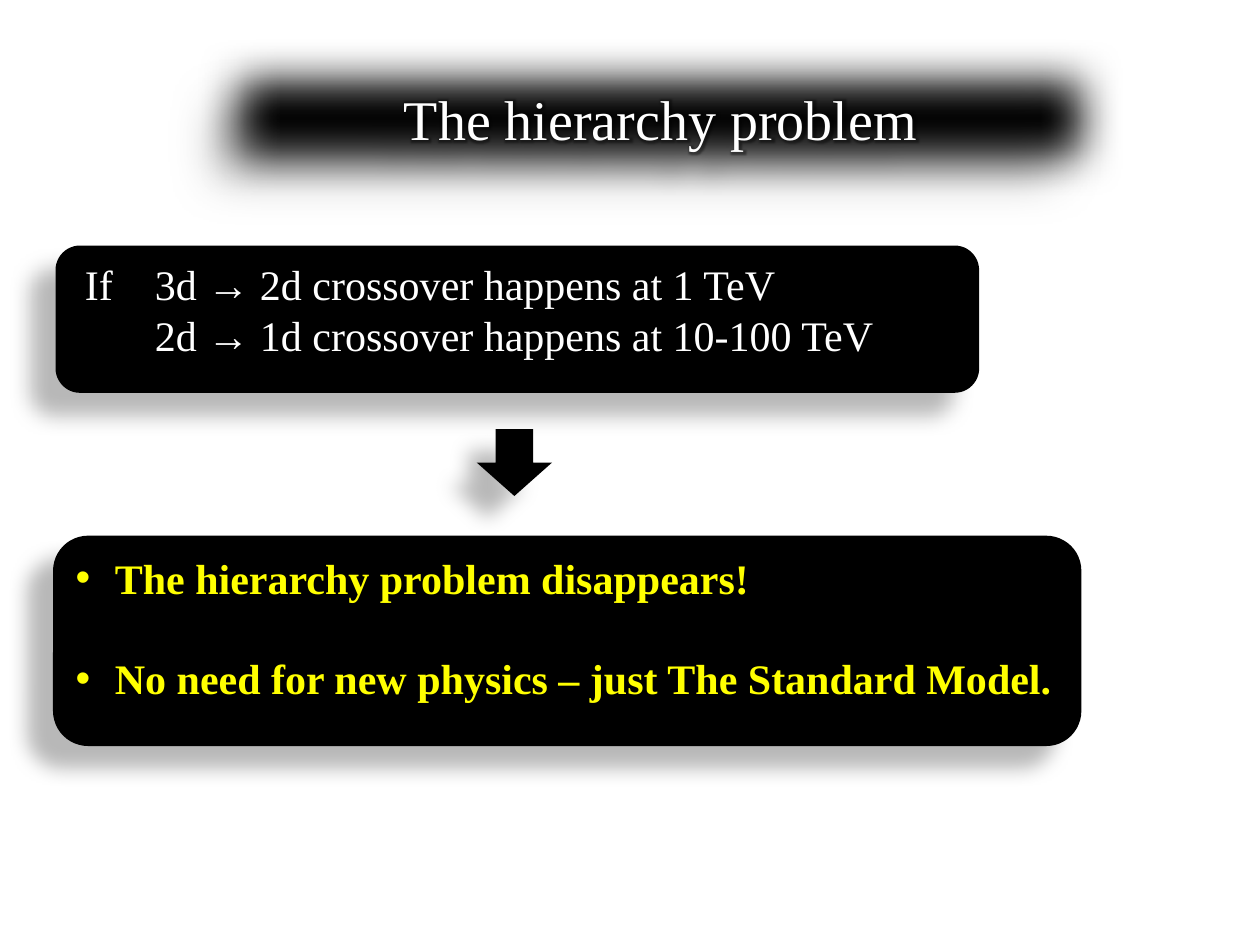
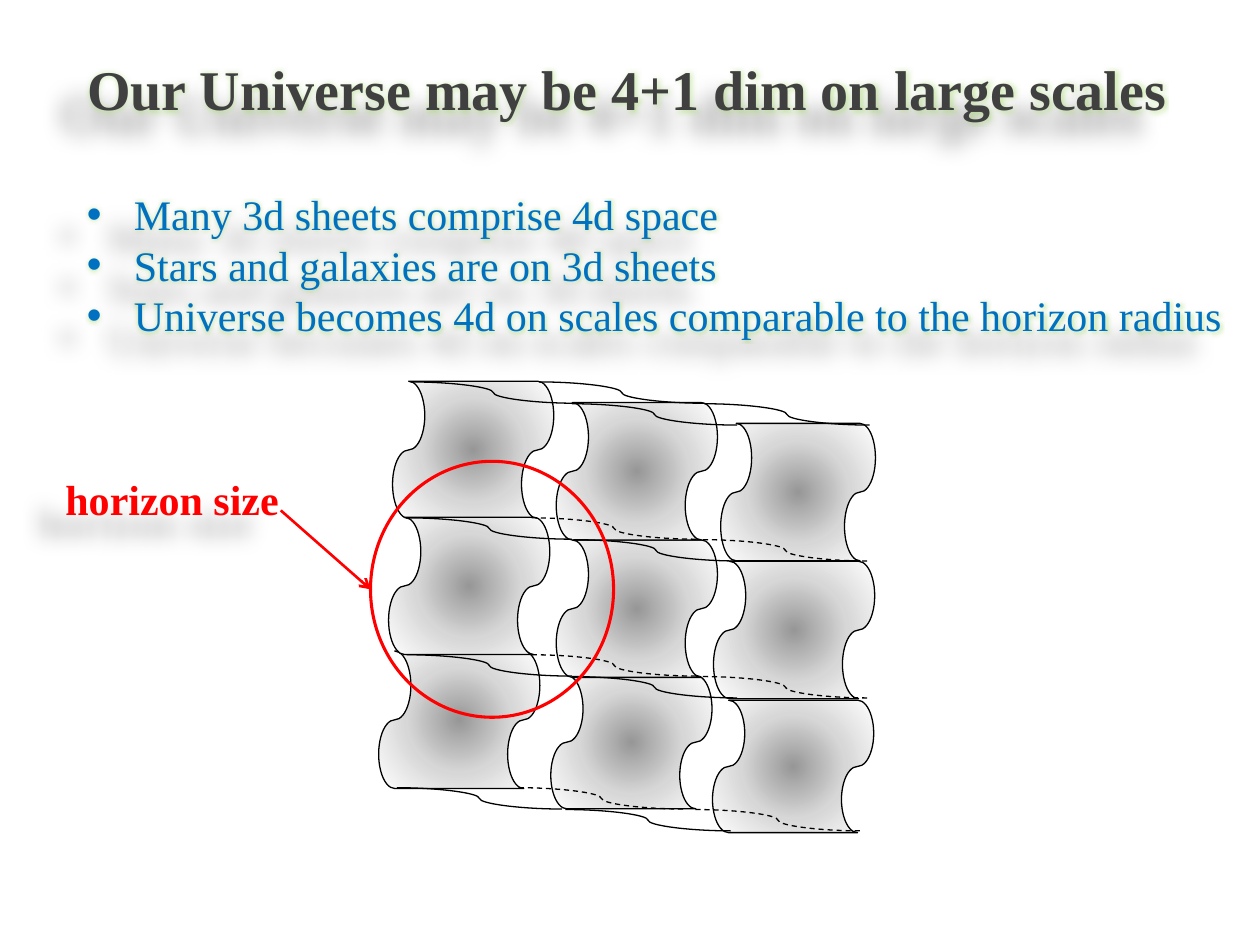
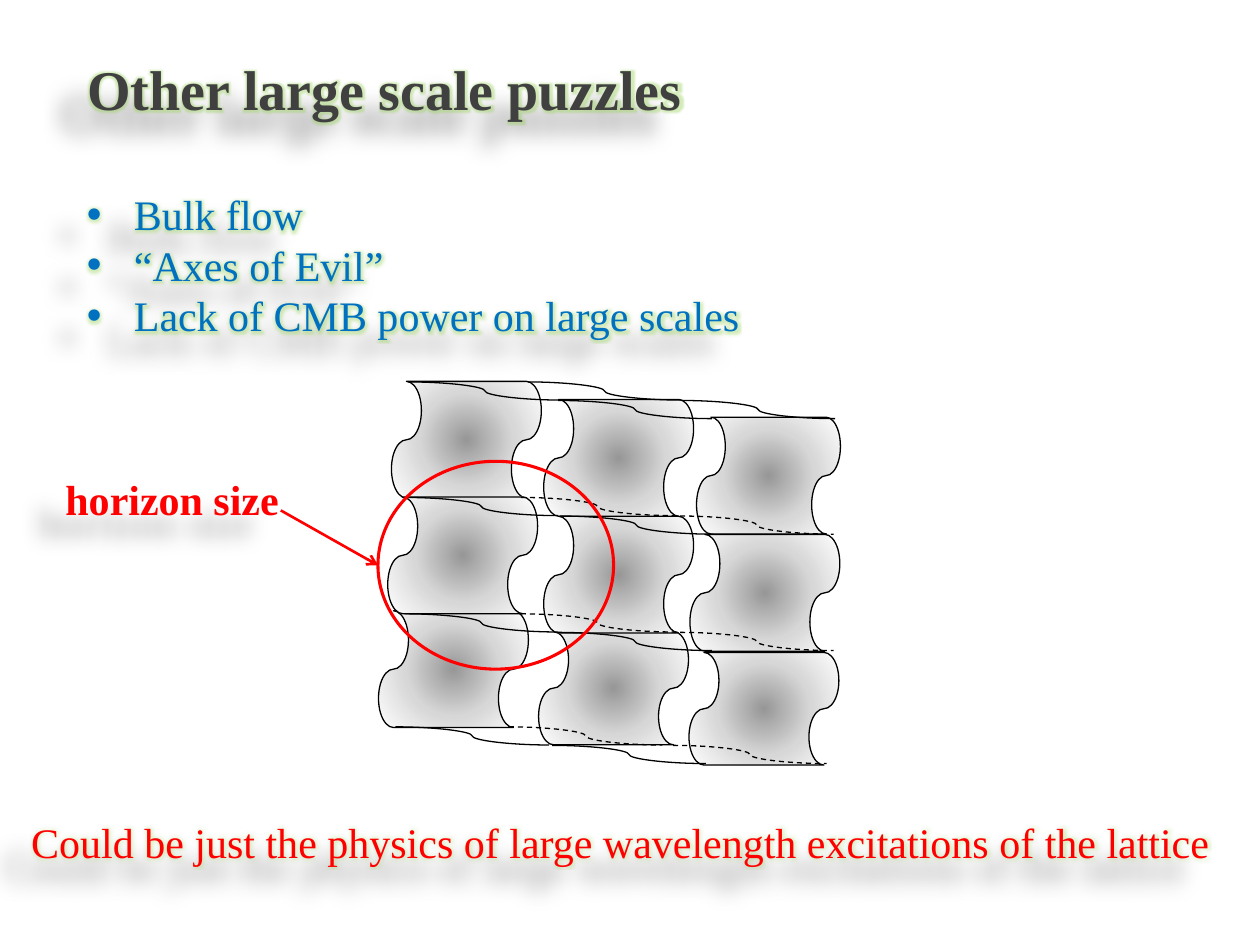
"""Build three slides on the hierarchy problem and a layered universe."""
from dataclasses import dataclass
from typing import Any

import lxml.etree
import pptx
import pptx.dml.color
import pptx.enum.dml
import pptx.enum.shapes
import pptx.enum.text
import pptx.oxml
import pptx.oxml.ns
import pptx.util

Cm = pptx.util.Cm
Pt = pptx.util.Pt
Shape = pptx.enum.shapes.MSO_SHAPE
Link = pptx.enum.shapes.MSO_CONNECTOR
Align = pptx.enum.text.PP_ALIGN
Anchor = pptx.enum.text.MSO_ANCHOR
qn = pptx.oxml.ns.qn

FONT = "Times New Roman"
LEADING = 1.2
COLORS = {
    "black": "000000", "white": "FFFFFF", "yellow": "FFFF00", "red": "FF0000",
    "blue": "0070C0", "gray": "404040", "lime": "92D050",
    "core": "979797", "mid": "D7D7D7",
}
CURVE = (3.33, 0.43)
STEP = 0.44


@dataclass
class Box:
    left: float
    top: float
    width: float
    height: float

    def place(self) -> tuple:
        return Cm(self.left), Cm(self.top), Cm(self.width), Cm(self.height)


@dataclass
class Style:
    size: int
    color: str
    bold: bool = False
    glow: str = ""
    align: Any = Align.LEFT
    indent: float = 0
    tab: float = 0
    gap: float = 0


@dataclass
class Sheet:
    x: float
    y: float
    width: float = 3.25
    height: float = 2.77


@dataclass
class Row:
    top: float
    lefts: tuple
    hidden: bool = True


@dataclass
class Grid:
    left: float
    top: float
    wide: float = 1
    tall: float = 1


@dataclass
class Page:
    title: str
    points: tuple
    grid: Grid
    ring: Box
    note: str = ""


SHEETS = (
    Sheet(4.45, 7.26, height=2.69), Sheet(0.98, 6.81), Sheet(4.56, 4.57),
    Sheet(7.81, 2.22, width=3.12), Sheet(4.56, 1.8), Sheet(7.73, 5),
    Sheet(1.26, 1.37), Sheet(1.18, 4.11), Sheet(7.71, 7.75, height=2.67),
)
ROWS = (
    Row(0, (0, 2.59, 3.25, 5.92), hidden=False),
    Row(2.74, (-0.08, 2.44, 3.28, 5.89)),
    Row(5.5, (-0.08, 2.44, 3.25, 5.89)),
    Row(8.18, (-0.28, 2.18, 3.12, 5.74)),
)
HEAD = Style(32, "gray", bold=True, glow="lime")
POINT = Style(24, "blue", glow="lime", indent=0.95)
LABEL = Style(24, "red", bold=True)
NOTE = Style(24, "red", glow="lime")
PAGES = (
    Page("Our Universe may be 4+1 dim on large scales",
         ("Many 3d sheets comprise 4d space",
          "Stars and galaxies are on 3d sheets",
          "Universe becomes 4d on scales comparable to the horizon radius"),
         Grid(8.28, 7.7), Box(7.47, 9.3, 4.9, 5.16)),
    Page("Other large scale puzzles",
         ("Bulk flow", "“Axes of Evil”", "Lack of CMB power on large scales"),
         Grid(8.23, 7.7, 0.93, 0.85), Box(7.62, 9.3, 4.75, 4.19),
         "Could be just the physics of large wavelength excitations of the lattice"),
)


def rgb(name: str) -> pptx.dml.color.RGBColor:
    return pptx.dml.color.RGBColor.from_string(COLORS[name])


def node(xml: str) -> Any:
    return pptx.oxml.parse_xml(xml.replace(" ", f' {pptx.oxml.ns.nsdecls("a")} ', 1))


def tint(name: str, alpha: int) -> str:
    return f'<a:srgbClr val="{COLORS[name]}"><a:alpha val="{alpha * 1000}"/></a:srgbClr>'


def shade(shape: Any, soft: int = 0) -> None:
    """Give a shape the slanted shadow and, if asked, a soft edge."""
    shape.shadow.inherit = False
    effects = shape._element.spPr.find(qn("a:effectLst"))
    effects.append(node(
        f'<a:outerShdw blurRad="{Pt(11.8)}" dist="{Pt(19.7)}" dir="{141 * 60000}" '
        f'algn="tl" rotWithShape="0">{tint("black", 28)}</a:outerShdw>'))
    if soft:
        effects.append(node(f'<a:softEdge rad="{Pt(soft)}"/>'))


def paint(shape: Any, soft: int = 0) -> None:
    shape.fill.solid()
    shape.fill.fore_color.rgb = rgb("black")
    shape.line.fill.background()
    shade(shape, soft)


def write(shape: Any, text: str, style: Style, anchor: Any = Anchor.TOP) -> None:
    """Fill a shape with text and format each paragraph and run."""
    frame = shape.text_frame
    frame.text = text
    frame.word_wrap = True
    frame.auto_size = pptx.enum.text.MSO_AUTO_SIZE.NONE
    frame.vertical_anchor = anchor
    for index, para in enumerate(frame.paragraphs):
        para.alignment = style.align
        para.line_spacing = Pt(style.size * LEADING)
        para.space_before = Pt(style.gap if index else 0)
        props = para._p.get_or_add_pPr()
        if style.indent:
            props.set("marL", str(Cm(style.indent)))
            props.set("indent", str(-Cm(style.indent)))
            props.append(node('<a:buFont typeface="Arial"/>'))
            props.append(node('<a:buChar char="•"/>'))
        if style.tab:
            tabs = lxml.etree.SubElement(props, qn("a:tabLst"))
            tabs.append(node(f'<a:tab pos="{Cm(style.tab)}" algn="l"/>'))
        for run in para.runs:
            font = run.font
            font.name, font.size, font.bold = FONT, Pt(style.size), style.bold
            font.color.rgb = rgb(style.color)
            if style.glow:
                fill = run._r.rPr.find(qn("a:solidFill"))
                effects = lxml.etree.Element(qn("a:effectLst"))
                effects.append(node(
                    f'<a:glow rad="{Pt(5)}">{tint(style.glow, 40)}</a:glow>'))
                fill.addnext(effects)


def start(deck: Any, title: str, box: Box, style: Style, anchor: Any) -> Any:
    """Add a title-only slide with its title placed and formatted."""
    slide = deck.slides.add_slide(deck.slide_layouts[5])
    head = slide.shapes.title
    head.left, head.top, head.width, head.height = box.place()
    write(head, title, style, anchor)
    return slide


def label(slide: Any, text: str, box: Box, style: Style) -> Any:
    shape = slide.shapes.add_textbox(*box.place())
    write(shape, text, style)
    shade(shape)
    return shape


def panel(slide: Any, kind: Any, box: Box) -> Any:
    shape = slide.shapes.add_shape(kind, *box.place())
    paint(shape)
    return shape


def join(slide: Any, kind: Any, ends: tuple, color: str, width: float) -> Any:
    link = slide.shapes.add_connector(kind, *map(Cm, ends))
    link.line.color.rgb = rgb(color)
    link.line.width = Pt(width)
    lxml.etree.SubElement(link._element.spPr, qn("a:effectLst"))
    return link


def tape(slide: Any, grid: Grid, sheet: Sheet) -> None:
    """Draw one curved sheet, turned on its side, around its centre."""
    wide, tall = sheet.width * grid.wide, sheet.height * grid.tall
    box = Box(grid.left + sheet.x * grid.wide - tall / 2,
              grid.top + sheet.y * grid.tall - wide / 2, tall, wide)
    shape = slide.shapes.add_shape(Shape.FLOWCHART_PUNCHED_TAPE, *box.place())
    shape.rotation = 90
    shape.shadow.inherit = False
    shape.line.color.rgb = rgb("black")
    shape.line.width = Pt(0.75)
    shape.fill.solid()
    props = shape._element.spPr
    props.find(qn("a:xfrm")).set("flipH", "1")
    stops = "".join(
        f'<a:gs pos="{pos * 1000}"><a:srgbClr val="{COLORS[name]}"/></a:gs>'
        for pos, name in ((0, "core"), (50, "mid"), (100, "white")))
    old = props.find(qn("a:solidFill"))
    props.replace(old, node(
        f'<a:gradFill rotWithShape="1"><a:gsLst>{stops}</a:gsLst><a:path path="circle">'
        '<a:fillToRect l="50000" t="50000" r="50000" b="50000"/></a:path></a:gradFill>'))


def weave(slide: Any, grid: Grid) -> None:
    """Draw the stacked sheets and the curves that tie them together."""
    for sheet in SHEETS:
        tape(slide, grid, sheet)
    for row in ROWS:
        for index, left in enumerate(row.lefts):
            x = grid.left + left * grid.wide
            y = grid.top + (row.top + index // 2 * STEP) * grid.tall
            ends = (x, y, x + CURVE[0] * grid.wide, y + CURVE[1] * grid.tall)
            link = join(slide, Link.CURVE, ends, "black", 0.75)
            if row.hidden and index % 2:
                link.line.dash_style = pptx.enum.dml.MSO_LINE.DASH


def claim(deck: Any) -> None:
    """Build the slide on the hierarchy problem."""
    style = Style(32, "white", glow="black", align=Align.CENTER)
    slide = start(deck, "The hierarchy problem", Box(4.01, 0.79, 18.62, 3.18),
                  style, Anchor.MIDDLE)
    paint(slide.shapes.title, soft=25)
    cause = panel(slide, Shape.ROUNDED_RECTANGLE, Box(1.12, 4.95, 18.62, 2.97))
    write(cause, "If\t3d → 2d crossover happens at 1 TeV\n"
          "\t2d → 1d crossover happens at 10-100 TeV", Style(24, "white", tab=1.41))
    cause.text_frame.margin_left = Cm(0.45)
    panel(slide, Shape.DOWN_ARROW, Box(9.61, 8.65, 1.52, 1.35))
    result = panel(slide, Shape.ROUNDED_RECTANGLE, Box(1.07, 10.8, 20.73, 4.24))
    write(result, "The hierarchy problem disappears!\n"
          "No need for new physics – just The Standard Model.",
          Style(24, "yellow", bold=True, indent=0.79, gap=28.8))


def scene(deck: Any, page: Page) -> None:
    """Build a slide with points, the lattice and its horizon."""
    slide = start(deck, page.title, Box(1.5, 0.97, 23.9, 1.61), HEAD, Anchor.TOP)
    shade(slide.shapes.title)
    weave(slide, page.grid)
    ring = page.ring
    circle = slide.shapes.add_shape(Shape.FLOWCHART_CONNECTOR, *ring.place())
    circle.shadow.inherit = False
    circle.fill.background()
    circle.line.color.rgb = rgb("red")
    circle.line.width = Pt(1.75)
    size = label(slide, "horizon size", Box(1.07, 9.42, 4.85, 1.27), LABEL)
    size.text_frame.word_wrap = False
    label(slide, "\n".join(page.points), Box(1.5, 3.68, 23.9, 3.3), POINT)
    ends = (5.66, 10.29, ring.left, ring.top + ring.height / 2)
    arrow = join(slide, Link.STRAIGHT, ends, "red", 1.5)
    arrow.line._get_or_add_ln().append(node('<a:tailEnd type="arrow"/>'))
    if page.note:
        label(slide, page.note, Box(0.38, 16.33, 24.56, 1.27), NOTE)


def main() -> None:
    deck = pptx.Presentation()
    deck.slide_width, deck.slide_height = Cm(25.4), Cm(19.05)
    claim(deck)
    for page in PAGES:
        scene(deck, page)
    deck.save("out.pptx")


if __name__ == "__main__":
    main()
